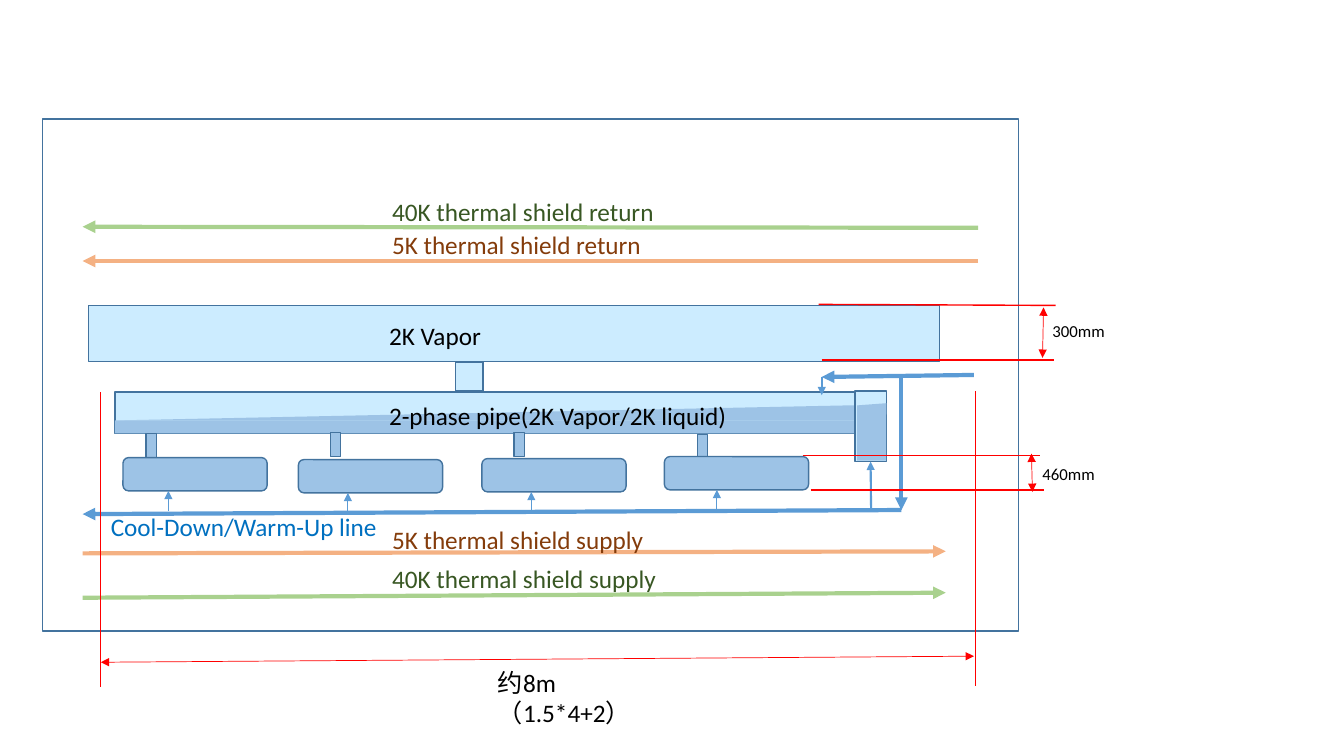
"""Draw the schematic of a cryomodule cooling circuit."""
from lxml import etree
from pptx import Presentation
from pptx import util as u
from pptx.dml import color
from pptx.enum import shapes, text
from pptx.oxml import ns

PX = 9144
VAPOR, LIQUID, OUTLINE = "CCECFF", "9DC3E6", "43739E"
COOLANT, RED, BLACK = "5B9BD5", "FF0000", "000000"
GREEN, ORANGE = "A9D18E", "F4B183"
DARK_GREEN, BROWN, BLUE = "385723", "843C0B", "0070C0"
SHAPE = shapes.MSO_SHAPE


def px(*lengths):
    """Turn px lengths into EMU."""
    return [u.Emu(length * PX) for length in lengths]


def rgb(value):
    """Turn a hex string into a colour."""
    return color.RGBColor.from_string(value)


def style(item, **values):
    """Set each given format value on an object."""
    for name, value in values.items():
        setattr(item, name, value)


def add_part(parent, place, fill=None, line=None, kind=SHAPE.RECTANGLE):
    """Add a preset shape with optional fill and outline."""
    part = parent.shapes.add_shape(kind, *px(*place))
    part.shadow.inherit = False
    if fill:
        part.fill.solid()
        part.fill.fore_color.rgb = rgb(fill)
    else:
        part.fill.background()
    if line:
        part.line.color.rgb = rgb(line)
        part.line.width = u.Pt(1)
    else:
        part.line.fill.background()
    return part


def add_line(page, start, end, hue, width, heads=()):
    """Add a straight line with triangles at the named ends."""
    line = page.shapes.add_connector(shapes.MSO_CONNECTOR.STRAIGHT, *px(*start, *end))
    style(line.line, width=u.Pt(width))
    line.line.color.rgb = rgb(hue)
    outline = line.line._get_or_add_ln()
    for head in heads:
        etree.SubElement(outline, ns.qn(f"a:{head}"), type="triangle")
    etree.SubElement(line._element.spPr, ns.qn("a:effectLst"))
    return line


def add_flow(page, start, end, hue, width=3):
    """Add an arrow that points the way the coolant flows."""
    return add_line(page, start, end, hue, width, ["tailEnd"])


def add_dimension(page, start, end):
    """Add a red dimension line with two arrowheads."""
    add_line(page, start, end, RED, 0.5, ["headEnd", "tailEnd"])


def add_label(page, left, top, width, wording, hue=BLACK, size=18):
    """Add a text label that wraps in its box."""
    height = 40 if size == 18 else 30
    box = page.shapes.add_textbox(*px(left, top, width, height))
    style(box.text_frame, word_wrap=True, auto_size=text.MSO_AUTO_SIZE.SHAPE_TO_FIT_TEXT)
    span = box.text_frame.paragraphs[0].add_run()
    style(span, text=wording)
    style(span.font, name="Calibri", size=u.Pt(size))
    span.font.color.rgb = rgb(hue)


def add_two_phase_pipe(page):
    """Add the pipe with its sloping liquid level."""
    pipe = page.shapes.add_group_shape()
    add_part(pipe, (114, 389, 734, 41), VAPOR, OUTLINE)
    slope = add_part(pipe, (119, 402, 730, 15), LIQUID, kind=SHAPE.RIGHT_TRIANGLE)
    slope._element.spPr.find(ns.qn("a:xfrm")).set("flipH", "1")
    add_part(pipe, (114, 417, 734, 13), LIQUID)


def add_end_pipe(page):
    """Add the vertical end pipe and its feed."""
    pipe = add_part(page, (848, 388, 31, 70), VAPOR, OUTLINE)
    add_part(page, (850, 400, 29, 11), LIQUID, kind=SHAPE.FLOWCHART_MANUAL_INPUT)
    add_part(page, (850, 411, 29, 46), LIQUID)
    feed = add_flow(page, (864, 507), (864, 458), COOLANT, 1.5)
    feed.end_connect(pipe, 2)


def add_cavity(page, stub, left, top, feed):
    """Add a cavity with its stub above and feed arrow below."""
    add_part(page, (*stub, 10, 24), LIQUID, OUTLINE)
    add_part(page, (left, top, 143, 33), LIQUID, OUTLINE, SHAPE.ROUNDED_RECTANGLE)
    add_flow(page, (feed, 507), (feed, top + 33), COOLANT, 0.5)


def main():
    """Build the slide and save it."""
    deck = Presentation()
    style(deck, slide_width=px(1333)[0], slide_height=px(750)[0])
    page = deck.slides.add_slide(deck.slide_layouts[6])

    add_part(page, (42, 118, 968, 508), line=OUTLINE)
    add_part(page, (88, 303, 844, 56), VAPOR, OUTLINE)
    add_two_phase_pipe(page)
    add_part(page, (452, 359, 27, 29), VAPOR, OUTLINE)

    for start, end, hue in [
        ((970, 226), (82, 225), GREEN),
        ((970, 259), (82, 259), ORANGE),
        ((82, 549), (938, 547), ORANGE),
        ((82, 593), (938, 588), GREEN),
        ((894, 506), (82, 510), COOLANT),
        ((894, 372), (894, 506), COOLANT),
        ((966, 372), (815, 374), COOLANT),
    ]:
        add_flow(page, start, end, hue)
    add_flow(page, (815, 374), (815, 392), COOLANT, 1.5)
    add_end_pipe(page)

    for start, end, width in [
        ((804, 486), (1035, 486), 1),
        ((796, 452), (1032, 452), 1),
        ((815, 357), (1045, 357), 1),
        ((812, 302), (1047, 303), 1),
        ((100, 389), (100, 682), 0.5),
        ((967, 388), (967, 681), 0.5),
    ]:
        add_line(page, start, end, RED, width)
    add_dimension(page, (1023, 450), (1024, 488))
    add_dimension(page, (1035, 305), (1034, 355))
    add_dimension(page, (100, 657), (966, 651))

    for stub, left, top, feed in [
        ((145, 430), 122, 454, 167),
        ((328, 429), 296, 456, 345),
        ((510, 429), 478, 455, 527),
        ((692, 431), 659, 453, 711),
    ]:
        add_cavity(page, stub, left, top, feed)

    for top, wording, hue in [
        (190, "40K thermal shield return", DARK_GREEN),
        (223, "5K thermal shield return", BROWN),
        (515, "5K thermal shield supply", BROWN),
        (554, "40K thermal shield supply", DARK_GREEN),
    ]:
        add_label(page, 379, top, 315, wording, hue)
    add_label(page, 100, 502, 315, "Cool-Down/Warm-Up line", BLUE)
    add_label(page, 376, 313, 315, "2K Vapor")
    add_label(page, 376, 392, 371, "2-phase pipe(2K Vapor/2K liquid)")
    add_label(page, 1024, 455, 100, "460mm", size=12)
    add_label(page, 1034, 313, 100, "300mm", size=12)
    add_label(page, 484, 657, 207, "约8m（1.5*4+2）")

    deck.save("out.pptx")


if __name__ == "__main__":
    main()
